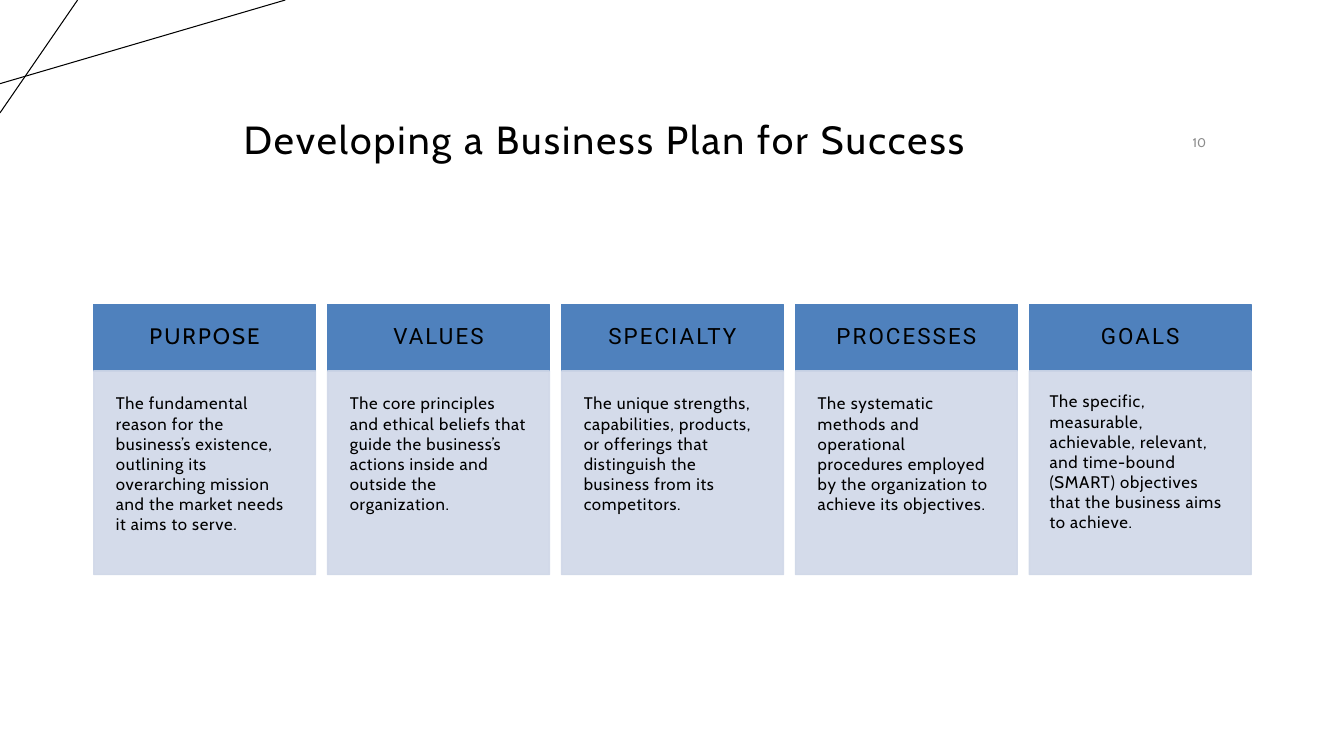
from lxml.etree import SubElement as Sub
from pptx import Presentation
from pptx.dml.color import RGBColor as RGB
from pptx.enum.shapes import MSO_CONNECTOR as Link, MSO_SHAPE as Kind
from pptx.enum.text import MSO_ANCHOR as Anchor, PP_ALIGN as Align
from pptx.oxml.ns import qn
from pptx.util import Inches, Pt

CARDS = [
    ("PURPOSE", "Cabin", 0.22,
     "The fundamental reason for the business’s existence, outlining its "
     "overarching mission and the market needs it aims to serve."),
    ("VALUES", "Roboto", 0.22,
     "The core principles and ethical beliefs that guide the business’s "
     "actions inside and outside the organization."),
    ("SPECIALTY", "Roboto", 0.22,
     "The unique strengths, capabilities, products, or offerings that "
     "distinguish the business from its competitors."),
    ("PROCESSES", "Roboto", 0.22,
     "The systematic methods and operational procedures employed by the "
     "organization to achieve its objectives."),
    ("GOALS", "Roboto", 0.2,
     "The specific, measurable, achievable, relevant, and time-bound (SMART) "
     "objectives that the business aims to achieve."),
]


def paint(fill, color, alpha=100):
    """Make a fill solid, with its opacity in percent."""
    fill.solid()
    fill.fore_color.rgb = RGB.from_string(color)
    if alpha < 100:
        for tone in fill._xPr.iter(qn("a:srgbClr")):
            Sub(tone, qn("a:alpha"), val=str(alpha * 1000))


def write(shape, text, size, face="Cabin", color="000000", gap=0,
          align=Align.LEFT, anchor=Anchor.MIDDLE, pad=(0.1, 0.05), lead=None):
    """Set one paragraph of text in a shape."""
    frame = shape.text_frame
    frame.word_wrap = True
    frame.vertical_anchor = anchor
    frame.margin_left = frame.margin_right = Inches(pad[0])
    frame.margin_top = frame.margin_bottom = Inches(pad[1])
    para = frame.paragraphs[0]
    para.text = text
    para.alignment = align
    para.line_spacing = lead
    font = para.font
    font.size, font.name = Pt(size), face
    font.color.rgb = RGB.from_string(color)
    if gap:
        font._element.set("spc", str(int(gap * 100)))


def block(slide, box, color, alpha=100):
    """Draw a filled rectangle with a line of the same colour."""
    shape = slide.shapes.add_shape(Kind.RECTANGLE, *map(Inches, box))
    shape.shadow.inherit = False
    paint(shape.fill, color, alpha)
    paint(shape.line.fill, color, alpha)
    shape.line.width = Pt(1)
    return shape


def corner(slide, left, top):
    """Draw the two crossing lines of the corner."""
    for x1, y1, x2, y2 in [(0, 0.83, 2.83, 0), (0.77, 0, 0, 1.12)]:
        ends = (left + x1, top + y1, left + x2, top + y2)
        line = slide.shapes.add_connector(Link.STRAIGHT, *map(Inches, ends))
        paint(line.line.fill, "000000")
        line.line.width = Pt(0.75)
        Sub(line._element.spPr, qn("a:effectLst"))


def header(slide, left, top, width, height):
    """Place the title and the page number."""
    wide, start = 10.51, 10.99
    title = slide.shapes.add_textbox(
        *map(Inches, (left, top, wide, height)))
    write(title, "Developing a Business Plan for Success", 28, gap=1.5,
          align=Align.CENTER, lead=0.9)
    page = slide.shapes.add_textbox(
        *map(Inches, (left + start, top, width - start, height)))
    write(page, "10", 9, color="8C8C8C")


def card(slide, left, top, width, height, item):
    """Place a heading block over its body block."""
    name, face, pad, text = item
    head = 0.66
    cap = block(slide, (left, top, width, head), "4F81BD")
    write(cap, name, 16, face, gap=1.5, align=Align.CENTER,
          pad=(0.17, 0.17), lead=0.9)
    body = block(slide, (left, top + head, width, height - head),
                 "D0D8E8", 90)
    write(body, text, 12, gap=0.5, anchor=Anchor.TOP, pad=(pad, pad))


def row(slide, left, top, width, height):
    """Spread the cards evenly over the row."""
    wide = 2.2
    step = (width - wide) / (len(CARDS) - 1)
    for i, item in enumerate(CARDS):
        card(slide, left + i * step, top, wide, height, item)


def main():
    """Build and save the slide."""
    deck = Presentation()
    deck.slide_width, deck.slide_height = Inches(13.33), Inches(7.5)
    slide = deck.slides.add_slide(deck.slide_layouts[6])
    corner(slide, 0, 0)
    header(slide, 0.74, 0.82, 12.25, 1.18)
    row(slide, 0.93, 3.02, 11.48, 2.68)
    deck.save("out.pptx")


if __name__ == "__main__":
    main()
